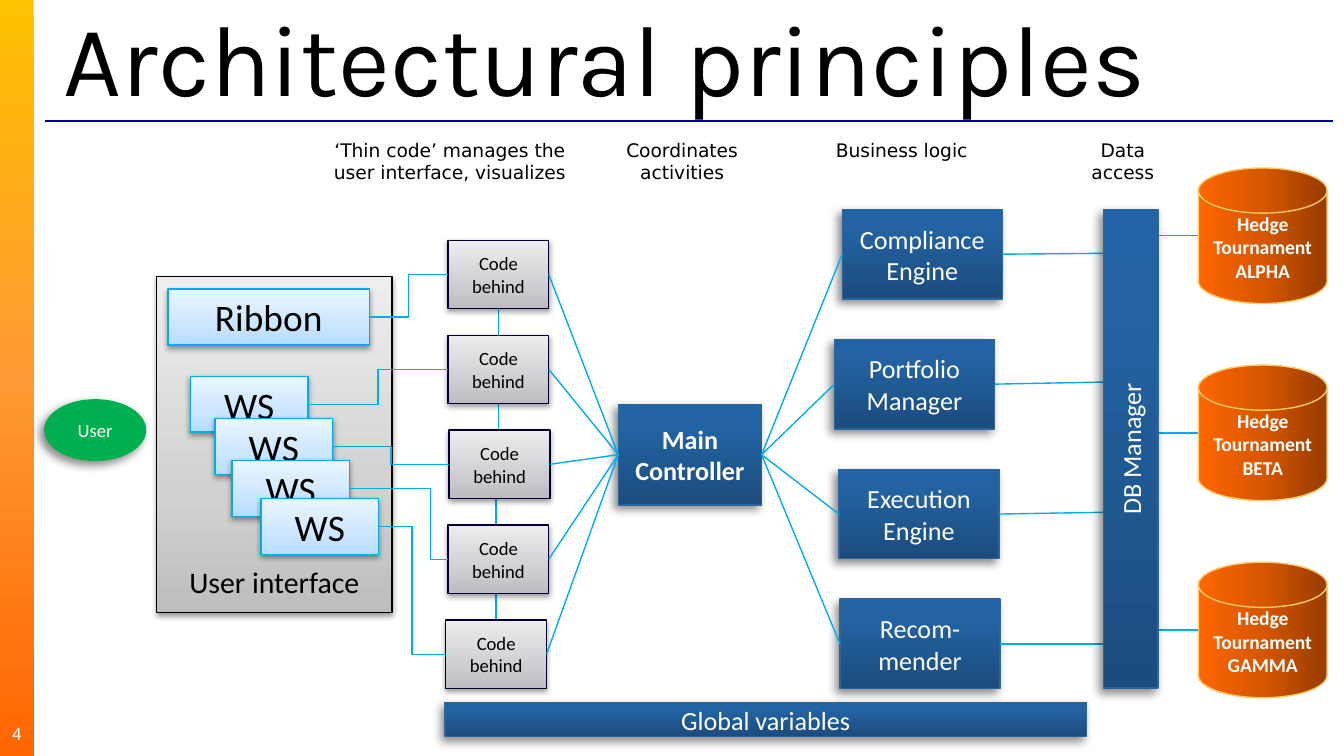
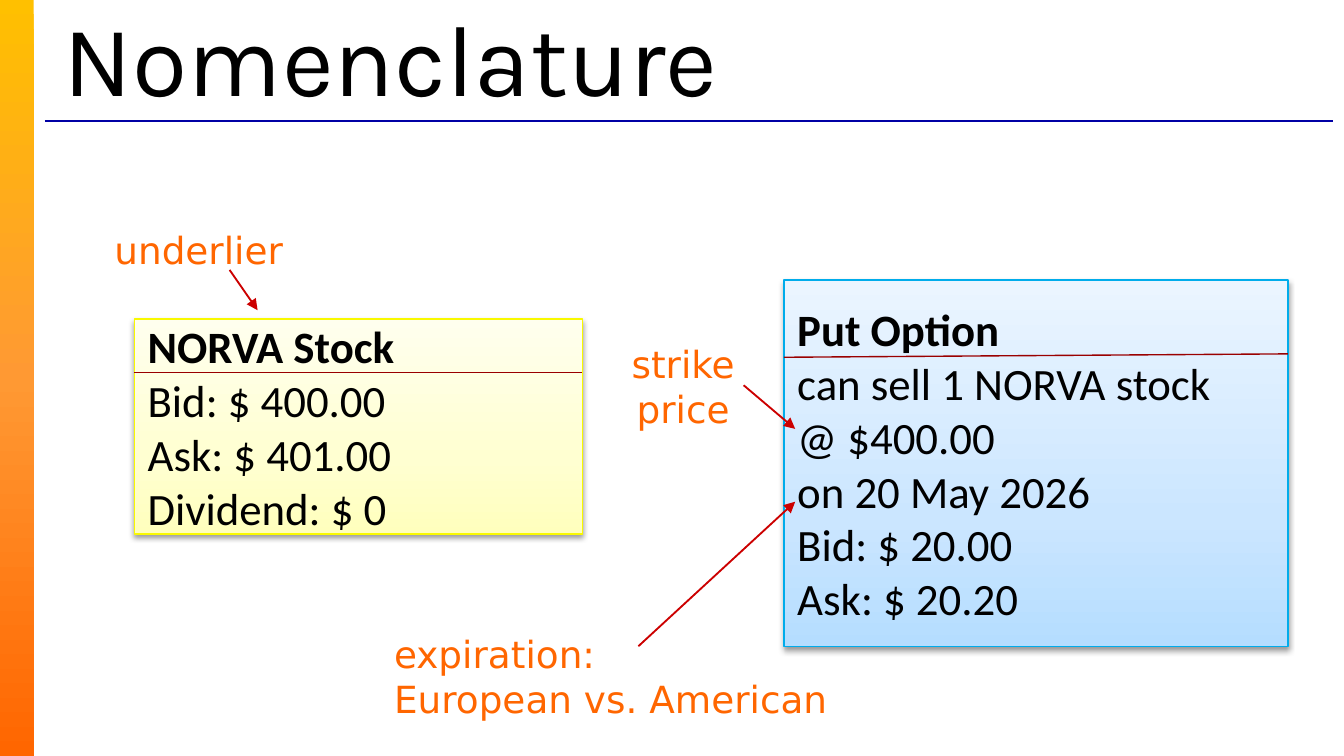
from dataclasses import dataclass
from typing import NamedTuple, Optional

from pptx import Presentation
from pptx import util as u
from pptx.dml.color import RGBColor
from pptx.enum import shapes, text
from pptx.oxml import parse_xml
from pptx.oxml.ns import nsdecls, qn

COLUMNS, ROWS = 120, 67.5  # square cells, twelve to the inch
CELL = u.Inches(10) / COLUMNS

RECT = shapes.MSO_SHAPE.RECTANGLE
STRAIGHT, ELBOW = shapes.MSO_CONNECTOR.STRAIGHT, shapes.MSO_CONNECTOR.ELBOW
LEFT, CENTER = text.PP_ALIGN.LEFT, text.PP_ALIGN.CENTER
MIDDLE, BOTTOM = text.MSO_ANCHOR.MIDDLE, text.MSO_ANCHOR.BOTTOM
TOP_SIDE, LEFT_SIDE, BOTTOM_SIDE, RIGHT_SIDE = range(4)


class Shadow(NamedTuple):
    alpha: int
    blur: float
    distance: float
    angle: int


class Skin(NamedTuple):
    stops: tuple  # (position in percent, colour); a single stop is a solid fill
    angle: int = 270
    line: Optional[str] = None
    shadow: Optional[Shadow] = None


class Type(NamedTuple):
    size: float
    color: str = "000000"
    font: str = "Calibri"
    bold: bool = False


class Area(NamedTuple):
    left: float
    top: float
    width: float
    height: float


SOFT = Shadow(38, 3.1, 1.6, 90)
DEEP = Shadow(45, 5, 3, 135)


@dataclass(frozen=True)
class Theme:
    # Colours
    connector: str = "00ACEB"
    title_rule: str = "0000A5"
    card_rule: str = "9A0000"
    arrow: str = "CC0000"
    band: Skin = Skin(((0, "FFC000"), (50, "FF9933"), (100, "FF6600")), 90)
    panel: Skin = Skin(((0, "BDBDBD"), (35, "D1D1D1"), (100, "EEEEEE")), 270, "000000", SOFT)
    sky: Skin = Skin(((0, "B5DDFF"), (35, "CBE6FF"), (100, "EBF5FF")), 270, "00ACEB", SOFT)
    grey: Skin = Skin(((0, "BBBBC0"), (35, "CFCFD3"), (100, "EDEDEF")), 270, "000031", SOFT)
    yellow: Skin = Skin(((0, "FFFFBD"), (35, "FFFFD1"), (100, "FFFFEE")), 270, "F9F900", SOFT)
    blue: Skin = Skin(((0, "1B4C7E"), (80, "2363A3"), (100, "2063A6")), 270, "2F6498", DEEP)
    disk: Skin = Skin(((0, "973C00"), (50, "D75600"), (100, "FF6600")), 180, "FFCC66")
    green: Skin = Skin(((0, "00B050"),), 0, "00B050", DEEP)
    # Type
    title: Type = Type(54, font="Karla")
    number: Type = Type(10, "FFFFFF")
    panel_type: Type = Type(16)
    screen: Type = Type(20)
    code: Type = Type(10)
    engine: Type = Type(14, "FFFFFF")
    controller: Type = Type(14, "FFFFFF", bold=True)
    database: Type = Type(10.5, "FFFFFF", bold=True)
    heading: Type = Type(10, font="DejaVu Sans")
    callout: Type = Type(20, "FF6600", "DejaVu Sans")
    card_head: Type = Type(24, bold=True)
    card_body: Type = Type(24)


THEME = Theme()


def cells(*counts: float) -> list:
    return [u.Emu(round(count * CELL)) for count in counts]


# Text
def add_text(para, words: str, style: Type) -> None:
    for index, line in enumerate(words.split("\n")):
        if index:
            para.add_line_break()
        span = para.add_run()
        span.text = line
        span.font.size = u.Pt(style.size)
        span.font.name = style.font
        span.font.bold = style.bold
        span.font.color.rgb = RGBColor.from_string(style.color)


def write(frame, paragraphs: list, align=CENTER) -> None:
    for index, (words, style) in enumerate(paragraphs):
        para = frame.add_paragraph() if index else frame.paragraphs[0]
        para.alignment = align
        add_text(para, words, style)


def add_label(page, area: Area, words: str, style: Type, align=CENTER, wrap=True):
    box = page.shapes.add_textbox(*cells(*area))
    frame = box.text_frame
    frame.word_wrap = wrap
    frame.auto_size = text.MSO_AUTO_SIZE.SHAPE_TO_FIT_TEXT
    write(frame, [(words, style)], align)
    return box


# Filled shapes
def paint(box, skin: Skin) -> None:
    properties = box.element.spPr
    if len(skin.stops) == 1:
        box.fill.solid()
        box.fill.fore_color.rgb = RGBColor.from_string(skin.stops[0][1])
    else:
        stops = "".join(f'<a:gs pos="{place * 1000}"><a:srgbClr val="{color}"/></a:gs>'
                        for place, color in skin.stops)
        properties.find(qn("a:prstGeom")).addnext(parse_xml(
            f'<a:gradFill {nsdecls("a")} rotWithShape="1"><a:gsLst>{stops}</a:gsLst>'
            f'<a:lin ang="{skin.angle * 60000}" scaled="0"/></a:gradFill>'))
    if skin.line:
        box.line.color.rgb = RGBColor.from_string(skin.line)
        box.line.width = u.Pt(0.75)
    else:
        box.line.fill.background()
    box.shadow.inherit = False
    if skin.shadow:
        shade = skin.shadow
        properties.find(qn("a:effectLst")).append(parse_xml(
            f'<a:outerShdw {nsdecls("a")} blurRad="{u.Pt(shade.blur)}" dist="{u.Pt(shade.distance)}" '
            f'dir="{shade.angle * 60000}" rotWithShape="0"><a:srgbClr val="000000">'
            f'<a:alpha val="{shade.alpha * 1000}"/></a:srgbClr></a:outerShdw>'))


def add_box(page, area: Area, skin: Skin, paragraphs=(), kind=RECT, align=CENTER, anchor=MIDDLE):
    box = page.shapes.add_shape(kind, *cells(*area))
    paint(box, skin)
    box.text_frame.word_wrap = True
    box.text_frame.vertical_anchor = anchor
    write(box.text_frame, paragraphs, align)
    return box


# Lines
def add_line(page, start: tuple, end: tuple, color: str = THEME.connector, kind=STRAIGHT,
             width: float = 0.75, arrow: bool = False):
    line = page.shapes.add_connector(kind, *cells(*start, *end))
    line.line.color.rgb = RGBColor.from_string(color)
    line.line.width = u.Pt(width)
    if arrow:
        line.line._get_or_add_ln().append(parse_xml(f'<a:tailEnd {nsdecls("a")} type="triangle"/>'))
    line.element.spPr.append(parse_xml(f'<a:effectLst {nsdecls("a")}/>'))
    return line


def join(page, first, first_side: int, second, second_side: int, kind=STRAIGHT):
    line = add_line(page, (0, 0), (1, 1), kind=kind)
    line.begin_connect(first, first_side)
    line.end_connect(second, second_side)
    return line


def bend_at(line, share: float) -> None:
    guides = line.element.spPr.find(qn("a:prstGeom")).get_or_add_avLst()
    guides.append(parse_xml(
        f'<a:gd {nsdecls("a")} name="adj1" fmla="val {round(share * 100000)}"/>'))


# Shared page parts
def prepare_layout(deck):
    layout = deck.slide_layouts.get_by_name("Title Only")
    sketch = deck.slides.add_slide(layout)
    band = add_box(sketch, Area(0, 0, 3, ROWS), THEME.band)
    rule = add_line(sketch, (4, 10.8), (119, 10.8), THEME.title_rule)
    for index, part in enumerate((band, rule)):
        layout.shapes.element.insert(2 + index, part.element)
    return layout, sketch


def set_title(page, words: str) -> None:
    title = page.shapes.title
    title.left, title.top, title.width, title.height = cells(4.5, 1.8, 115, 6.4)
    frame = title.text_frame
    frame.auto_size = text.MSO_AUTO_SIZE.NONE
    frame.vertical_anchor = MIDDLE
    write(frame, [(words, THEME.title)], LEFT)


def build_architecture(page) -> None:
    set_title(page, "Architectural principles")
    number = page.shapes.add_textbox(*cells(0, 63.7, 3, 3.6)).text_frame
    number.margin_left = number.margin_right = number.margin_top = number.margin_bottom = 0
    number.vertical_anchor = MIDDLE
    number.word_wrap = True
    write(number, [("4", THEME.number)])

    # Chain behind the code boxes, turned to run upwards
    chain = add_line(page, (58.32, 41.52), (30.48, 41.28), kind=ELBOW)
    chain.element.spPr.find(qn("a:xfrm")).set("rot", str(90 * 60000))

    # User and user interface
    add_box(page, Area(4, 35.7, 9, 5.4), THEME.green, [("User", THEME.number)],
            shapes.MSO_SHAPE.OVAL)
    panel = add_box(page, Area(14, 24.7, 21, 30), THEME.panel,
                    [("User interface", THEME.panel_type)], anchor=BOTTOM)
    panel.text_frame.margin_bottom = u.Inches(0.1)
    screens = [add_box(page, Area(15, 25.8, 18, 5), THEME.sky, [("Ribbon", THEME.screen)])]
    for left, top in ((17, 33.6), (19.2, 37.35), (20.7, 41.1), (23.3, 44.5)):
        screens.append(add_box(page, Area(left, top, 10.5, 5), THEME.sky, [("WS", THEME.screen)]))

    # Code, controller and engines
    codes = [add_box(page, Area(left, 21.45 + 8.48 * row, 9, 6.1), THEME.grey,
                     [("Code behind", THEME.code)])
             for row, left in enumerate((40, 40, 40.1, 40, 39.8))]
    controller = add_box(page, Area(55.2, 36.1, 12.8, 9), THEME.blue,
                         [("Main Controller", THEME.controller)])
    engines = [add_box(page, Area(left, 18.7 + 11.6 * row, 14.3, 8), THEME.blue,
                       [(name, THEME.engine)])
               for row, (left, name) in enumerate((
                   (75.2, "Compliance Engine"), (74.5, "Portfolio Manager"),
                   (74.9, "Execution Engine"), (75, "Recom-mender")))]
    add_box(page, Area(39.75, 62.75, 57.25, 3), THEME.blue, [("Global variables", THEME.engine)])

    # Connections
    for screen, code in zip(screens, codes):
        link = join(page, screen, RIGHT_SIDE, code, LEFT_SIDE, ELBOW)
        if screen is screens[3]:
            bend_at(link, 0.82)
    for code in codes:
        join(page, code, RIGHT_SIDE, controller, LEFT_SIDE)
    for engine, end in zip(engines, ((100.8, 22.6), (99.4, 34.1), (101, 45.7), (101, 57.5))):
        join(page, engine, LEFT_SIDE, controller, RIGHT_SIDE)
        add_line(page, (0, 0), end).begin_connect(engine, RIGHT_SIDE)

    # Data access
    for row, name in enumerate(("ALPHA", "BETA", "GAMMA")):
        top = 15 + 17.6 * row
        add_box(page, Area(107, top, 11.5, 12.1), THEME.disk,
                [(f"Hedge\nTournament\n{name}", THEME.database)],
                shapes.MSO_SHAPE.FLOWCHART_MAGNETIC_DISK)
        add_line(page, (101, top + 6.05), (107, top + 6.05))
    manager = add_box(page, Area(98.5, 18.7, 4.9, 42.75), THEME.blue,
                      [("DB Manager", THEME.engine)])
    manager.text_frame._txBody.bodyPr.set("vert", "vert270")

    # Column headings
    for left, width, height, words in (
            (28.3, 23.7, 5.3, "‘Thin code’ manages the user interface, visualizes"),
            (53.4, 15, 5.3, "Coordinates activities"),
            (73, 15, 3.2, "Business logic"),
            (95.5, 9.5, 5.3, "Data access")):
        add_label(page, Area(left, 11.8, width, height), words, THEME.heading)


def build_nomenclature(page) -> None:
    set_title(page, "Nomenclature")

    # Cards: area, skin, heading, lines, heights of the rule's two ends
    cards = (
        (Area(12, 28.5, 40, 19.2), THEME.yellow, "NORVA Stock",
         ("Bid: $ 400.00\nAsk: $ 401.00", "Dividend: $ 0"), (33.25, 33.25)),
        (Area(70, 25, 45, 32.75), THEME.sky, "Put Option",
         ("can sell 1 NORVA stock\n@ $400.00", "on 20 May 2026", "Bid: $ 20.00", "Ask: $ 20.20"),
         (31.9, 31.6)),
    )
    for area, skin, head, lines, (start, end) in cards:
        add_box(page, area, skin, [(head, THEME.card_head)]
                + [(line, THEME.card_body) for line in lines], align=LEFT)
        add_line(page, (area.left, start), (area.left + area.width, end), THEME.card_rule)

    # Callouts and their arrows
    callouts = (
        (Area(9, 19.7, 17.5, 5.3), "underlier", CENTER, False, (20.5, 24.1), (23, 27.7)),
        (Area(54.5, 29.9, 13, 9.2), "strike price", CENTER, True, (66.4, 34.4), (71, 38.3)),
        (Area(34, 55.8, 41.2, 9.2), "expiration:\nEuropean vs. American", LEFT, False,
         (57, 57.7), (71, 44.8)),
    )
    for area, words, align, wrap, start, end in callouts:
        add_label(page, area, words, THEME.callout, align, wrap)
        add_line(page, start, end, THEME.arrow, width=1, arrow=True)


def main() -> None:
    deck = Presentation()
    deck.slide_width, deck.slide_height = cells(COLUMNS, ROWS)
    layout, first = prepare_layout(deck)
    build_architecture(first)
    build_nomenclature(deck.slides.add_slide(layout))
    deck.save("out.pptx")


if __name__ == "__main__":
    main()
